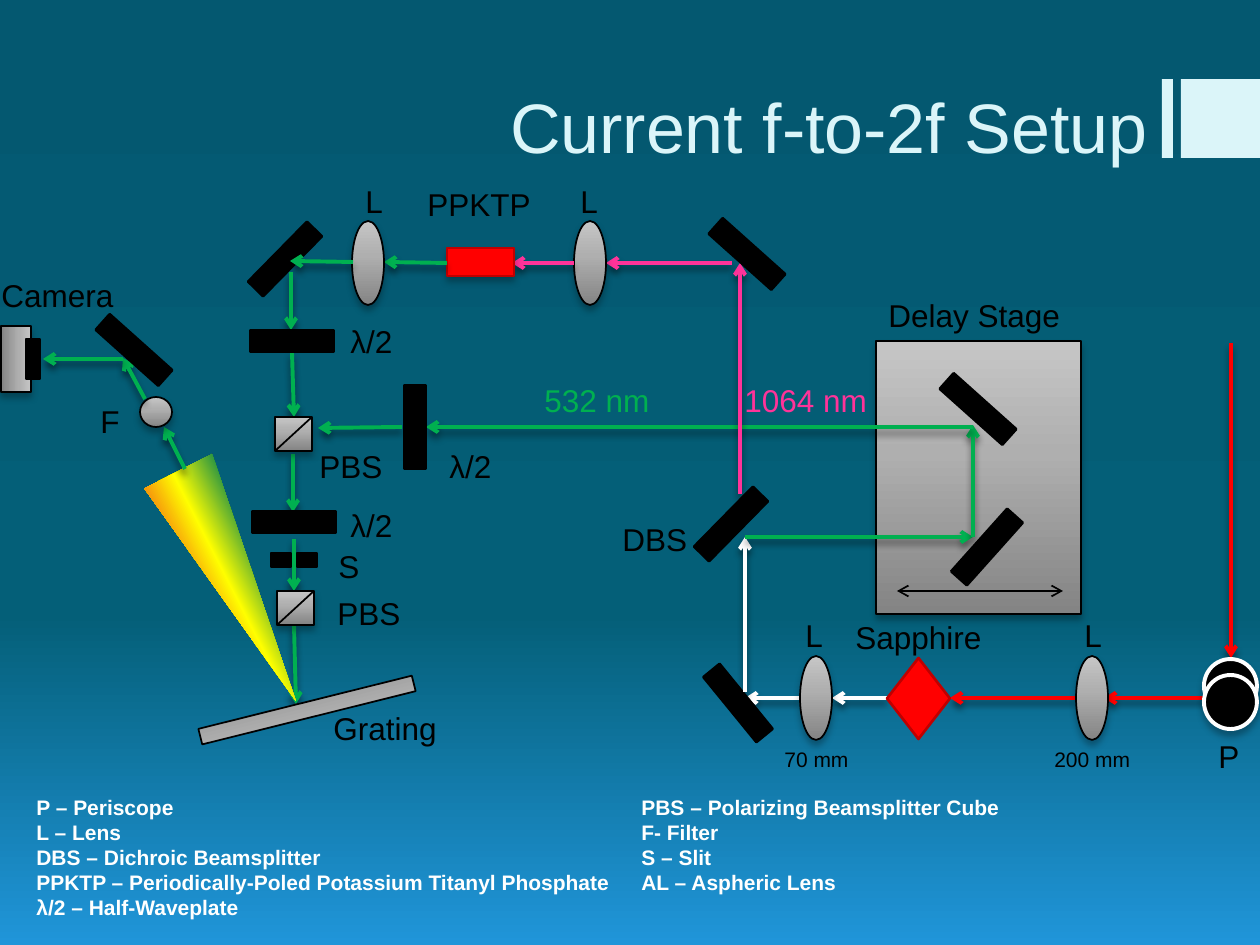
from lxml.etree import SubElement
from pptx import Presentation
from pptx.dml.color import RGBColor
from pptx.enum.shapes import MSO_CONNECTOR, MSO_SHAPE
from pptx.enum.text import MSO_ANCHOR, PP_ALIGN
from pptx.oxml.ns import qn
from pptx.util import Emu, Pt

SCALE = 914400 / 126  # EMU in one px
HEX = {
    "black": "000000", "white": "FFFFFF", "ice": "DBF5F9", "red": "FF0000",
    "wine": "C00000", "green": "00B050", "pink": "FF3399",
}
SKY = [(0, "045870"), (65, "045F78"), (100, "2095D9")]
GLASS = [(0, "C6C6C6"), (41, "AFAFAF"), (100, "848484")]
RAINBOW = [(0, "A603AB"), (21, "0819FB"), (35, "1A8D48"), (52, "FFFF00"),
           (73, "EE3F17"), (88, "E81766"), (100, "A603AB")]

deck = Presentation()
deck.slide_width, deck.slide_height = Emu(9144000), Emu(6858000)
slide = deck.slides.add_slide(deck.slide_layouts[6])


def px(*sizes):
    return [Emu(round(size * SCALE)) for size in sizes]


def tint(name):
    return RGBColor.from_string(HEX[name])


def blend(fill, root, stops, angle):
    """Give a fill its gradient stops; the angle runs clockwise."""
    fill.gradient()
    fill.gradient_angle = (360 - angle) % 360
    ramp = root.find(".//" + qn("a:gsLst"))
    for old in list(ramp):
        ramp.remove(old)
    for place, color in stops:
        stop = SubElement(ramp, qn("a:gs"), pos=str(place * 1000))
        SubElement(stop, qn("a:srgbClr"), val=color)


def shade(props, alpha=None):
    """Set a soft shadow below, or none."""
    for old in props.findall(qn("a:effectLst")):
        props.remove(old)
    effect = SubElement(props, qn("a:effectLst"))
    if alpha:
        drop = SubElement(effect, qn("a:outerShdw"), blurRad="50000",
                          dist="38100", dir="5400000", rotWithShape="0")
        color = SubElement(drop, qn("a:srgbClr"), val=HEX["black"])
        SubElement(color, qn("a:alpha"), val=str(alpha * 1000))


def part(box, x, y, w, h, kind=MSO_SHAPE.RECTANGLE, fill=GLASS, line="black",
         width=1, turn=0, angle=90, shadow=False):
    item = slide.shapes.add_shape(kind, *px(box[0] + x, box[1] + y, w, h))
    item.rotation = turn
    item.shadow.inherit = False
    if isinstance(fill, str):
        item.fill.solid()
        item.fill.fore_color.rgb = tint(fill)
    else:
        blend(item.fill, item.element.spPr, fill, angle)
    if line:
        item.line.color.rgb = tint(line)
        item.line.width = Pt(width)
    else:
        item.line.fill.background()
    if shadow:
        shade(item.element.spPr, 28)


def beam(box, x1, y1, x2, y2, color="green", width=2.25, ends=("tailEnd",),
         shadow=True):
    ray = slide.shapes.add_connector(
        MSO_CONNECTOR.STRAIGHT,
        *px(box[0] + x1, box[1] + y1, box[0] + x2, box[1] + y2))
    ray.line.color.rgb = tint(color)
    ray.line.width = Pt(width)
    props = ray.element.spPr
    for end in ends:
        SubElement(props.find(qn("a:ln")), qn("a:" + end), type="arrow")
    shade(props, 48 if shadow else None)


def text(box, x, y, w, *lines, h=50, size=18, color="black", bold=False,
         align=PP_ALIGN.LEFT, anchor=MSO_ANCHOR.TOP):
    frame = slide.shapes.add_textbox(*px(box[0] + x, box[1] + y, w, h)).text_frame
    frame.word_wrap = True
    frame.vertical_anchor = anchor
    for i, words in enumerate(lines):
        para = frame.paragraphs[0] if i == 0 else frame.add_paragraph()
        para.alignment = align
        run = para.add_run()
        run.text = words
        run.font.name, run.font.size, run.font.bold = "Arial", Pt(size), bold
        run.font.color.rgb = tint(color)


def slab(box, x, y, turn, w=84, h=21):
    """Black mirror, plate or slit jaw, centred on x, y."""
    part(box, x - w / 2, y - h / 2, w, h, fill="black", width=1.5, turn=turn)


def lens(box, x, y):
    part(box, x - 16, y - 42, 32, 84, MSO_SHAPE.OVAL, shadow=True)


def cube(box, x, y):
    part(box, x, y, 37, 34, shadow=True)
    beam(box, x, y + 34, x + 37, y, "black", 1, (), False)


def title(box):
    for x, w in ((1010, 11), (1029, 79)):
        part(box, x, 64, w, 79, fill="ice", line=None)
    text(box, 0, 0, 1008, "Current f-to-2f Setup", h=159, size=40, color="ice",
         align=PP_ALIGN.RIGHT, anchor=MSO_ANCHOR.BOTTOM)


def source(box):
    # Laser, lenses and sapphire along one row
    row = 358
    beam(box, 631, 3, 631, 318, "red")
    for start, stop, color in ((630, 504, "red"), (476, 350, "red"),
                               (287, 232, "white"), (200, 145, "white")):
        beam(box, start, row, stop, row, color)
    lens(box, 492, row)
    lens(box, 216, row)
    part(box, 287, 318, 63, 81, MSO_SHAPE.DIAMOND, "red", "wine", 1.5)
    # Mirror and dichroic beamsplitter
    slab(box, 138, 363, 50.8)
    slab(box, 131, 184, 134.5)
    beam(box, 145, 352, 145, 197, "white")
    # Periscope
    for y in (319, 335):
        part(box, 604, y, 53, 54, MSO_SHAPE.OVAL, "black", "white", 2.25, shadow=True)
    for x, y, w, name in ((193, 270, 32, "L"), (472, 270, 32, "L"),
                          (243, 272, 219, "Sapphire"), (606, 391, 50, "P"),
                          (10, 174, 159, "DBS")):
        text(box, x, y, w, name)
    for x, name in ((172, "70 mm"), (442, "200 mm")):
        text(box, x, 400, 126, name, h=38, size=12)


def delay(box):
    part(box, 456, 51, 205, 273, shadow=True)
    slab(box, 567, 257, 311.8)
    beam(box, 325, 247, 553, 247)
    beam(box, 553, 247, 553, 135)
    beam(box, 553, 137, 6, 137)
    slab(box, 558, 119, 41.8)
    beam(box, 477, 301, 643, 301, "black", 1, ("headEnd", "tailEnd"), False)
    text(box, 456, 0, 205, "Delay Stage")
    text(box, 112, 85, 147, "532 nm", color="green")


def double(box):
    # Infrared arm up to the crystal
    beam(box, 500, 324, 500, 93, "pink")
    slab(box, 507, 84, 41.8)
    beam(box, 492, 93, 366, 93, "pink")
    lens(box, 350, 93)
    beam(box, 334, 93, 272, 93, "pink")
    part(box, 207, 78, 67, 28, fill="red", line="wine", shadow=True)
    # Green light after the crystal
    beam(box, 207, 93, 144, 92)
    lens(box, 128, 93)
    slab(box, 45, 89, 134.5)
    beam(box, 113, 92, 50, 91)
    for x, y, w, name in ((113, 6, 32, "L"), (328, 6, 32, "L"),
                          (175, 9, 149, "PPKTP")):
        text(box, x, y, w, name)
    text(box, 492, 205, 179, "1064 nm", color="pink")


def merge(box):
    # Beams and half-waveplates
    for ray in ((51, 7, 51, 65), (52, 87, 54, 152), (162, 162, 78, 163),
                (53, 189, 53, 247), (54, 274, 54, 326), (54, 359, 56, 439)):
        beam(box, *ray)
    for x, y, turn in ((52, 76, 180), (175, 162, 270), (54, 257, 180)):
        slab(box, x, y, turn)
    # Slit and beamsplitter cubes
    for x in (41, 67):
        slab(box, x, 295, 180, 20, 14)
    cube(box, 35, 152)
    cube(box, 37, 326)
    for x, y, name in ((67, 176, "PBS"), (85, 323, "PBS"), (98, 51, "λ/2"),
                       (98, 235, "λ/2"), (197, 176, "λ/2"), (86, 276, "S")):
        text(box, x, y, 90, name)


def detect(box):
    # Grating and spread spectrum
    part(box, 197, 432, 220, 16, turn=166)
    part(box, 199, 187, 76, 258, MSO_SHAPE.ISOSCELES_TRIANGLE, RAINBOW, None,
         turn=152.9, angle=0)
    # Filter, mirror and camera
    beam(box, 185, 199, 164, 157)
    part(box, 140, 127, 32, 30, MSO_SHAPE.OVAL, shadow=True)
    beam(box, 145, 129, 123, 88)
    slab(box, 134, 80, 41.8)
    part(box, -17, 74, 66, 30, turn=90, shadow=True)
    slab(box, 33, 89, 90, 40, 14)
    beam(box, 123, 89, 43, 89)
    for x, y, w, name in ((-11, 0, 145, "Camera"), (88, 126, 70, "F"),
                          (321, 433, 145, "Grating")):
        text(box, x, y, w, name)


def legend(box):
    form = {"h": 140, "size": 12, "color": "white", "bold": True}
    text(box, 0, 0, 605, "P – Periscope", "L – Lens", "DBS – Dichroic Beamsplitter",
         "PPKTP – Periodically-Poled Potassium Titanyl Phosphate",
         "λ/2 – Half-Waveplate", **form)
    text(box, 605, 0, 605, "PBS – Polarizing Beamsplitter Cube", "F- Filter",
         "S – Slit", "AL – Aspheric Lens", **form)


blend(slide.background.fill, slide.element, SKY, 90)
title((152, 15))
source((600, 340))
delay((420, 290))
double((240, 170))
merge((240, 265))
detect((0, 270))
legend((24, 788))
deck.save("out.pptx")
